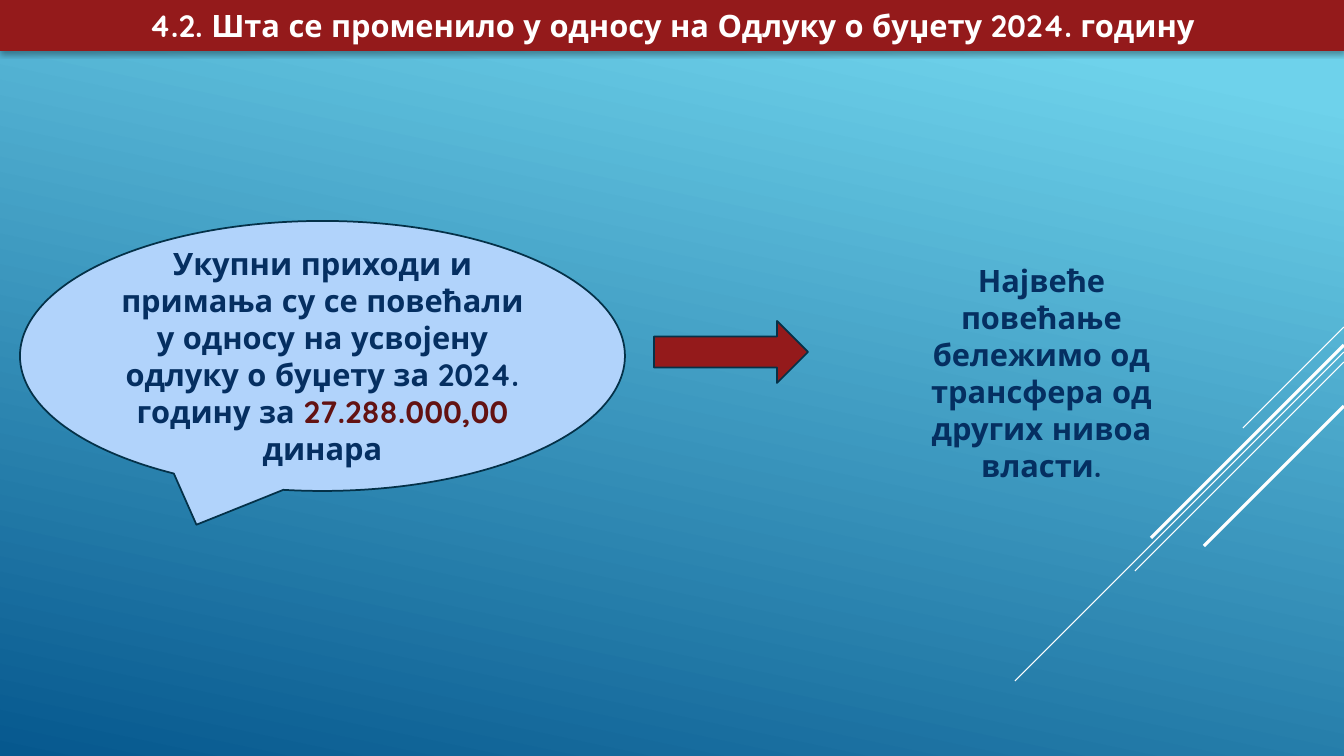
"""Builds the slide on what changed against the 2024 budget decision."""
from lxml.etree import SubElement
from pptx import Presentation
from pptx.dml.color import RGBColor
from pptx.enum.shapes import MSO_CONNECTOR, MSO_SHAPE as SHAPE
from pptx.enum.text import MSO_ANCHOR, MSO_AUTO_SIZE, PP_ALIGN
from pptx.oxml import parse_xml
from pptx.oxml.ns import nsdecls, qn
from pptx.util import Pt

WIDTH, HEIGHT = 1344, 756
PX = 12192000 / WIDTH
FONT, TEXT_SIZE = "Quicksand", 22
WHITE, RED, NAVY, DARK_RED = "FFFFFF", "941A1B", "052F61", "631212"
PALE_BLUE, OUTLINE = "B1D3FB", "043148"
BACKGROUND = [(0.1, "6ED2EB"), (1, "06588E")]
BACKGROUND_ANGLE = 258

HEADING = [("4.2. Шта се променило у односу на Одлуку о буџету 2024. годину", WHITE)]
INCREASE = [
    ("Укупни приходи и примања су се повећали у односу на усвојену "
     "одлуку о буџету за 2024. годину за ", NAVY),
    ("27.288.000,00 ", DARK_RED),
    ("динара", NAVY),
]
REASON = [("Највеће повећање бележимо од трансфера од других нивоа власти.", NAVY)]

HEADING_BOX = (0, 0, WIDTH, 51)
FIGURES = [
    (SHAPE.OVAL_CALLOUT, (20, 221, 605, 270), PALE_BLUE, INCREASE),
    (SHAPE.RIGHT_ARROW, (654, 321, 154, 62), RED, []),
    (SHAPE.TEAR, (838, 211, 407, 324), None, REASON),
]
DIAGONALS = [(327, 101, 0.75), (352, 329, 0.75), (362, 209, 0.75),
             (345, 193, 2.25), (406, 140, 2.25)]


def emu(*lengths):
    return [round(length * PX) for length in lengths]


def color(code):
    return RGBColor.from_string(code)


def paint(part, code):
    part.fill.solid()
    part.fill.fore_color.rgb = color(code)


def write(part, pieces):
    frame = part.text_frame
    frame.word_wrap = True
    frame.auto_size = MSO_AUTO_SIZE.NONE
    frame.vertical_anchor = MSO_ANCHOR.MIDDLE
    paragraph = frame.paragraphs[0]
    paragraph.alignment = PP_ALIGN.CENTER
    font = paragraph.font
    font.name, font.size, font.bold = FONT, Pt(TEXT_SIZE), True
    for words, code in pieces:
        run = paragraph.add_run()
        run.text = words
        run.font.color.rgb = color(code)


def add_background(slide):
    fill = slide.background.fill
    fill.gradient()
    fill.gradient_angle = BACKGROUND_ANGLE
    for stop, (position, code) in zip(fill.gradient_stops, BACKGROUND):
        stop.position = position
        stop.color.rgb = color(code)


def add_diagonal(slide, top, reach, weight):
    ends = emu(WIDTH, top, WIDTH - reach, top + reach)
    diagonal = slide.shapes.add_connector(MSO_CONNECTOR.STRAIGHT, *ends)
    diagonal.line.color.rgb = color(WHITE)
    diagonal.line.width = Pt(weight)
    SubElement(diagonal._element.spPr, qn("a:effectLst"))


def add_heading(slide):
    heading = slide.shapes.title
    heading.left, heading.top, heading.width, heading.height = emu(*HEADING_BOX)
    properties = heading._element.spPr
    properties.append(parse_xml(
        f'<a:prstGeom {nsdecls("a")} prst="roundRect"><a:avLst/></a:prstGeom>'))
    paint(heading, RED)
    properties.append(parse_xml(
        f'<a:effectLst {nsdecls("a")}><a:outerShdw blurRad="44450" dist="27940" '
        'dir="5400000" algn="ctr" rotWithShape="0"><a:srgbClr val="000000">'
        '<a:alpha val="32000"/></a:srgbClr></a:outerShdw></a:effectLst>'))
    write(heading, HEADING)


def add_figure(slide, outline, box, fill, pieces):
    figure = slide.shapes.add_shape(outline, *emu(*box))
    figure.shadow.inherit = False
    if fill:
        paint(figure, fill)
        figure.line.color.rgb = color(OUTLINE)
        figure.line.width = Pt(1.25)
    else:
        figure.fill.background()
        figure.line.fill.background()
    if pieces:
        write(figure, pieces)


def main():
    deck = Presentation()
    deck.slide_width, deck.slide_height = emu(WIDTH, HEIGHT)
    slide = deck.slides.add_slide(deck.slide_layouts[5])
    add_background(slide)
    add_heading(slide)
    for diagonal in DIAGONALS:
        add_diagonal(slide, *diagonal)
    for figure in FIGURES:
        add_figure(slide, *figure)
    deck.save("out.pptx")


if __name__ == "__main__":
    main()
